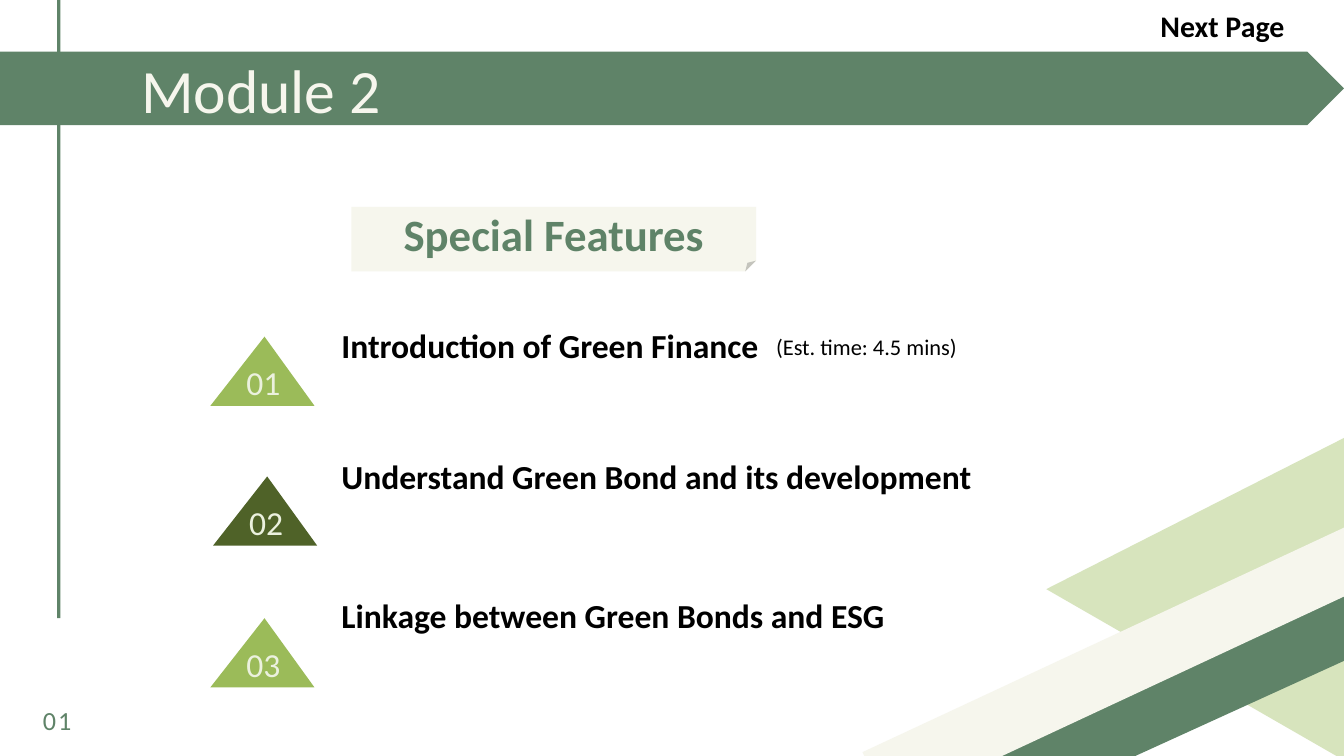
from pptx import Presentation, util as u
from pptx.dml.color import RGBColor
from pptx.enum import shapes, text

GREEN = RGBColor(0x5F, 0x83, 0x68)
CREAM = RGBColor(0xF6, 0xF6, 0xED)
LIME = RGBColor(0x9B, 0xBB, 0x59)
OLIVE = RGBColor(0x4F, 0x62, 0x28)
PALE = RGBColor(0xD7, 0xE4, 0xBD)
MIST = RGBColor(0xEB, 0xF1, 0xDE)
BLACK = RGBColor(0, 0, 0)

CELL = u.Inches(1)
COLS, ROWS = 20, 11.25
MARKERS = [("01", 3.13, 5.01, LIME), ("02", 3.17, 7.09, OLIVE), ("03", 3.13, 9.2, LIME)]
TOPICS = [
    ("Introduction of Green Finance", 0),
    ("Understand Green Bond and its development", 97),
    ("Linkage between Green Bonds and ESG", 106),
]


def grid(*cells):
    """Convert grid columns and rows to slide lengths."""
    return [round(c * CELL) for c in cells]


def write(p, words, size, color, bold=False, align=text.PP_ALIGN.LEFT):
    """Set a paragraph's text and format its run."""
    p.text = words
    p.alignment = align
    font = p.runs[0].font
    font.name, font.size, font.bold = "Calibri", u.Pt(size), bold
    font.color.rgb = color


def add_block(s, kind, at, fill, rotation=0, adjust=None):
    """Add a flat filled preset shape."""
    sp = s.shapes.add_shape(kind, *grid(*at))
    sp.shadow.inherit = False
    sp.fill.solid()
    sp.fill.fore_color.rgb = fill
    sp.line.fill.background()
    sp.rotation = rotation
    if adjust is not None:
        sp.adjustments[0] = adjust
    return sp


def add_label(s, at, words, size, color, bold=False, align=text.PP_ALIGN.LEFT):
    """Add a one-line text box."""
    sp = s.shapes.add_textbox(*grid(*at))
    sp.text_frame.word_wrap = False
    write(sp.text_frame.paragraphs[0], words, size, color, bold, align)
    return sp


def add_marker(s, number, left, top, fill):
    """Add a numbered triangle."""
    sp = add_block(s, shapes.MSO_SHAPE.ISOSCELES_TRIANGLE, (left, top, 1.55, 1.03), fill, adjust=0.52)
    tf = sp.text_frame
    tf.vertical_anchor = text.MSO_ANCHOR.BOTTOM
    write(tf.paragraphs[0], number, 36, MIST, align=text.PP_ALIGN.CENTER)


def add_page_number(s):
    """Add the spaced page number in the lower left corner."""
    sp = add_label(s, (0.32, 10.4, 1.06, 0.5), "01", 28, GREEN, align=text.PP_ALIGN.CENTER)
    tf = sp.text_frame
    tf.word_wrap = True
    tf.margin_left = tf.margin_right = tf.margin_top = tf.margin_bottom = 0
    p = tf.paragraphs[0]
    p.line_spacing = u.Pt(39.2)
    p.runs[0].font._element.set("spc", "220")


def place(s, sp, at):
    """Move a placeholder to the front and to its place on the grid."""
    sp.left, sp.top, sp.width, sp.height = grid(*at)
    s.shapes.element.append(sp.element)
    tf = sp.text_frame
    tf.auto_size = text.MSO_AUTO_SIZE.NONE
    tf.word_wrap = False
    tf.vertical_anchor = text.MSO_ANCHOR.TOP
    return tf


def fill_topics(tf):
    """Write the topics as an unbulleted list."""
    tf.text = "\n".join(words for words, _ in TOPICS)
    for p, (words, gap) in zip(tf.paragraphs, TOPICS):
        write(p, words, 36, BLACK, bold=True)
        p.space_before = u.Pt(gap)
        pPr = p._p.get_or_add_pPr()
        pPr.set("marL", "0")
        pPr.set("indent", "0")
        pPr.append(pPr.makeelement("{http://schemas.openxmlformats.org/drawingml/2006/main}buNone", {}))


def add_backdrop(s):
    """Add the side rule, the corner stripes and the title band."""
    kind = shapes.MSO_SHAPE
    add_block(s, kind.RECTANGLE, (0.85, -2.22, 0.05, 11.42), GREEN)
    add_page_number(s)
    add_block(s, kind.ISOSCELES_TRIANGLE, (16.29, 6.07, 5.17, 4.27), PALE, 29.9, 0.54)
    add_block(s, kind.RECTANGLE, (12.97, 10.03, 8, 1.13), GREEN, 335.5)
    add_block(s, kind.RECTANGLE, (16.2, 5.91, 0.93, 8.02), CREAM, 65)
    add_block(s, kind.PENTAGON, (0, 0.77, COLS, 1.09), GREEN)


def main():
    """Build the module slide."""
    prs = Presentation()
    prs.slide_width, prs.slide_height = grid(COLS, ROWS)
    s = prs.slides.add_slide(prs.slide_layouts[1])
    add_backdrop(s)
    heading = add_block(s, shapes.MSO_SHAPE.FOLDED_CORNER, (5.23, 3.08, 6.02, 0.96), CREAM)
    write(heading.text_frame.paragraphs[0], "Special Features", 48, GREEN, True, text.PP_ALIGN.CENTER)
    for marker in MARKERS:
        add_marker(s, *marker)
    tf = place(s, s.shapes.title, (2, 0.72, 3.8, 1.21))
    write(tf.paragraphs[0], "Module 2", 66, CREAM)
    fill_topics(place(s, s.placeholders[1], (4.98, 4.79, 9.68, 4.75)))
    add_label(s, (17.17, 0.07, 2.08, 0.64), "Next Page", 32, BLACK, bold=True)
    add_label(s, (11.45, 4.91, 2.91, 0.5), "(Est. time: 4.5 mins)", 24, BLACK)
    prs.save("out.pptx")


if __name__ == "__main__":
    main()
